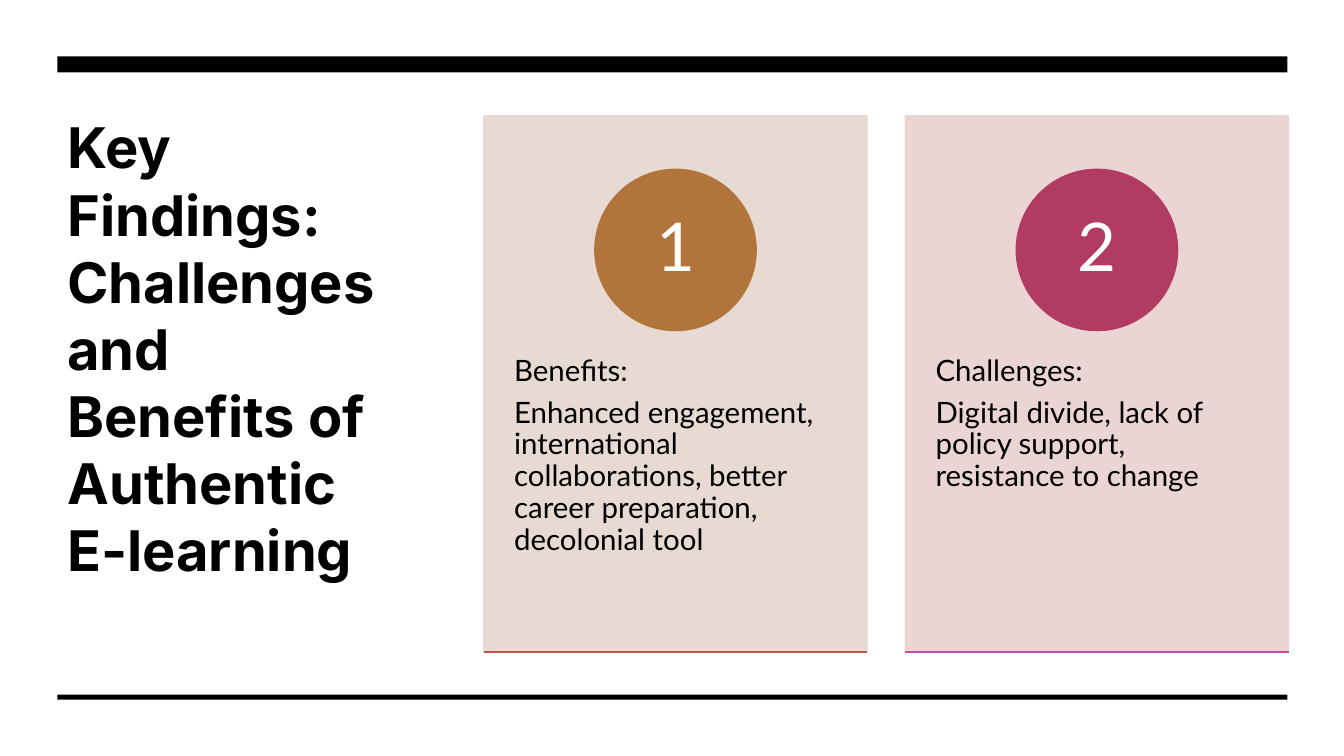
from dataclasses import dataclass

import pptx
import pptx.dml.color
import pptx.enum.shapes
import pptx.enum.text
import pptx.oxml.ns
import pptx.oxml.xmlchemy
import pptx.util
from lxml import etree

Inches = pptx.util.Inches
Pt = pptx.util.Pt
Shape = pptx.enum.shapes.MSO_SHAPE
Align = pptx.enum.text.PP_ALIGN
Anchor = pptx.enum.text.MSO_ANCHOR

COLORS = {
    "black": "000000",
    "white": "FFFFFF",
    "sand": "E4D6CE",
    "bronze": "B1753B",
    "brick": "C3554D",
    "blush": "E9D1D0",
    "raspberry": "B13B63",
    "magenta": "C34DA7",
}

CARD_LEFT, CARD_TOP, CARD_WIDTH, CARD_HEIGHT = 4.8, 1.15, 3.8, 5.32
CARD_PITCH = 4.18
BADGE_TOP, BADGE_SIZE = 1.68, 1.6
NUMBER_SIZE = 1.13


@dataclass(frozen=True)
class Box:
    left: float
    top: float
    width: float
    height: float

    def lengths(self) -> tuple:
        return tuple(map(Inches, (self.left, self.top, self.width, self.height)))


@dataclass(frozen=True)
class TextStyle:
    size: float
    font: str
    color: str
    bold: bool = False
    align: Align = Align.LEFT
    line_spacing: float = 1.0
    space_after: float = 0


@dataclass(frozen=True)
class Card:
    heading: str
    detail: str
    panel: str
    badge: str
    base: str


TITLE = TextStyle(40, "Inter", "black", bold=True)
BODY = TextStyle(21, "Lato", "black", line_spacing=0.9, space_after=7.35)
NUMBER = TextStyle(48, "Lato", "white", align=Align.CENTER, line_spacing=0.9)

RULES = [Box(0.57, 0.56, 12.2, 0.16), Box(0.57, 6.89, 12.2, 0.05)]
CARDS = [
    Card("Benefits:",
         "Enhanced engagement, international collaborations, "
         "better career preparation, decolonial tool",
         "sand", "bronze", "brick"),
    Card("Challenges:",
         "Digital divide, lack of policy support, resistance to change",
         "blush", "raspberry", "magenta"),
]


def rgb(name: str) -> pptx.dml.color.RGBColor:
    return pptx.dml.color.RGBColor.from_string(COLORS[name])


def add_filled(slide, kind: Shape, box: Box, color: str,
               outlined: bool = True, opacity: int = 100) -> None:
    """Add a flat shape whose outline, if any, matches its fill."""
    shape = slide.shapes.add_shape(kind, *box.lengths())
    shape.shadow.inherit = False
    shape.fill.solid()
    shape.fill.fore_color.rgb = rgb(color)
    if outlined:
        shape.line.color.rgb = rgb(color)
        shape.line.width = Pt(1)
    else:
        shape.line.fill.background()
    if opacity < 100:
        properties = shape.fill._xPr
        for tint in properties.iter(pptx.oxml.ns.qn("a:srgbClr")):
            alpha = etree.SubElement(tint, pptx.oxml.ns.qn("a:alpha"))
            alpha.set("val", str(opacity * 1000))


def add_text(slide, box: Box, paragraphs: list[str], style: TextStyle,
             insets: tuple[float, float] = (0.1, 0.05),
             anchor: Anchor = Anchor.TOP) -> None:
    """Add wrapped text; insets are horizontal, then vertical."""
    frame = slide.shapes.add_textbox(*box.lengths()).text_frame
    frame.word_wrap = True
    frame.vertical_anchor = anchor
    frame.margin_left = frame.margin_right = Inches(insets[0])
    frame.margin_top = frame.margin_bottom = Inches(insets[1])
    for index, words in enumerate(paragraphs):
        paragraph = frame.add_paragraph() if index else frame.paragraphs[0]
        paragraph.alignment = style.align
        paragraph.line_spacing = style.line_spacing
        paragraph.space_after = Pt(style.space_after)
        run = paragraph.add_run()
        run.text = words
        run.font.size = Pt(style.size)
        run.font.name = style.font
        run.font.bold = style.bold
        run.font.color.rgb = rgb(style.color)


def add_base_line(slide, left: float, color: str) -> None:
    bottom = Inches(CARD_TOP + CARD_HEIGHT)
    base = slide.shapes.add_connector(
        pptx.enum.shapes.MSO_CONNECTOR.STRAIGHT,
        Inches(left), bottom, Inches(left + CARD_WIDTH), bottom)
    base.line.color.rgb = rgb(color)
    base.line.width = Pt(1)
    etree.SubElement(base._element.spPr, pptx.oxml.ns.qn("a:effectLst"))


def add_card(slide, index: int, card: Card) -> None:
    left = CARD_LEFT + index * CARD_PITCH
    center = left + CARD_WIDTH / 2
    badge = Box(center - BADGE_SIZE / 2, BADGE_TOP, BADGE_SIZE, BADGE_SIZE)
    number = Box(center - NUMBER_SIZE / 2,
                 BADGE_TOP + (BADGE_SIZE - NUMBER_SIZE) / 2,
                 NUMBER_SIZE, NUMBER_SIZE)
    add_filled(slide, Shape.RECTANGLE,
               Box(left, CARD_TOP, CARD_WIDTH, CARD_HEIGHT), card.panel, opacity=90)
    add_text(slide, Box(left, 3.17, CARD_WIDTH, 3.19),
             [card.heading, card.detail], BODY, insets=(0.3, 0.36))
    add_filled(slide, Shape.OVAL, badge, card.badge)
    add_text(slide, number, [str(index + 1)], NUMBER,
             insets=(0.12, 0.01), anchor=Anchor.MIDDLE)
    add_base_line(slide, left, card.base)


def main() -> None:
    deck = pptx.Presentation()
    deck.slide_width, deck.slide_height = Inches(13.33), Inches(7.5)
    slide = deck.slides.add_slide(deck.slide_layouts[6])
    add_text(slide, Box(0.57, 1.07, 3.45, 4.45),
             ["Key Findings: Challenges and Benefits of Authentic E-learning"], TITLE)
    for rule in RULES:
        add_filled(slide, Shape.RECTANGLE, rule, "black", outlined=False)
    for index, card in enumerate(CARDS):
        add_card(slide, index, card)
    deck.save("out.pptx")


if __name__ == "__main__":
    main()
